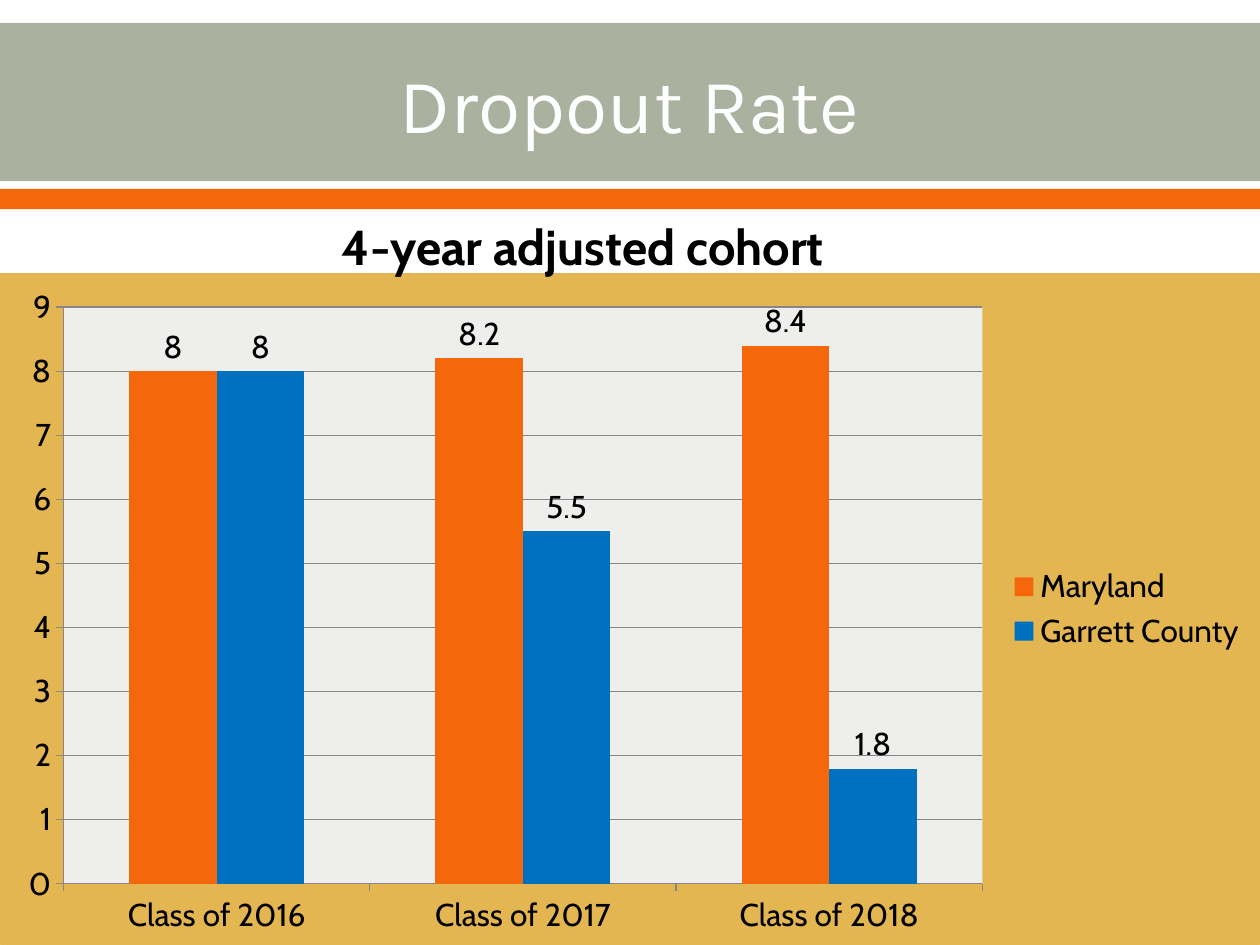
import pptx
import pptx.chart.data
import pptx.dml.color
import pptx.enum.chart
import pptx.enum.shapes
import pptx.enum.text
import pptx.oxml
import pptx.util

Pt = pptx.util.Pt
ORANGE, BLUE, GOLD, SAGE = "F4680B", "0070C0", "E3B651", "ABB19F"
WHITE, BLACK, PALE, GRAY = "FFFFFF", "000000", "EEEFEC", "868686"
CLASSES = ["Class of 2016", "Class of 2017", "Class of 2018"]
RATES = [("Maryland", [8, 8.2, 8.4], ORANGE),
         ("Garrett County", [8, 5.5, 1.8], BLUE)]


def color(hex_string):
    return pptx.dml.color.RGBColor.from_string(hex_string)


def paint(fill, hex_string):
    fill.solid()
    fill.fore_color.rgb = color(hex_string)


def style_font(font, name, size, hex_string, bold=False):
    font.name, font.size, font.bold = name, Pt(size), bold
    font.color.rgb = color(hex_string)


def write_centered(shape, text, name, size, hex_string, bold=False):
    frame = shape.text_frame
    frame.word_wrap = True
    frame.text = text
    para = frame.paragraphs[0]
    para.alignment = pptx.enum.text.PP_ALIGN.CENTER
    style_font(para.runs[0].font, name, size, hex_string, bold)


def place(shape, left, top, width, height):
    shape.left, shape.top = Pt(left), Pt(top)
    shape.width, shape.height = Pt(width), Pt(height)


def add_band(page, left, top, width, height, hex_string):
    band = page.shapes.add_shape(pptx.enum.shapes.MSO_SHAPE.RECTANGLE,
                                 Pt(left), Pt(top), Pt(width), Pt(height))
    band.shadow.inherit = False
    paint(band.fill, hex_string)
    band.line.fill.background()


def add_header(page, left, top, width, height):
    stripe = 11.5
    add_band(page, left, top, width, height - stripe - 4.5, SAGE)
    add_band(page, left, top + height - stripe, width, stripe, ORANGE)

    # Title, raised above the bands
    title = page.shapes.title
    page.shapes._spTree.append(title._element)
    place(title, left + 36, top + 1.5, width - 72, 88)
    write_centered(title, "Dropout Rate", "Karla", 44, WHITE)
    title.text_frame.vertical_anchor = pptx.enum.text.MSO_ANCHOR.MIDDLE


def style_areas(chart):
    """Chart and plot backgrounds, and the fixed place of the plot."""
    def area_format(hex_string, line_xml):
        return pptx.oxml.parse_xml(
            '<c:spPr xmlns:c="http://schemas.openxmlformats.org/drawingml/2006/chart"'
            ' xmlns:a="http://schemas.openxmlformats.org/drawingml/2006/main">'
            f'<a:solidFill><a:srgbClr val="{hex_string}"/></a:solidFill>'
            f'{line_xml}</c:spPr>')

    border = (f'<a:ln w="9525"><a:solidFill><a:srgbClr val="{GOLD}"/>'
              '</a:solidFill></a:ln>')
    space = chart._chartSpace
    space.chart.addnext(area_format(GOLD, border))
    plot_area = space.chart.plotArea
    plot_area.append(area_format(PALE, "<a:ln><a:noFill/></a:ln>"))

    for old in plot_area.findall(pptx.oxml.ns.qn("c:layout")):
        plot_area.remove(old)
    parts = "".join(f'<c:{key} val="{value}"/>' for key, value in [
        ("layoutTarget", "inner"), ("xMode", "edge"), ("yMode", "edge"),
        ("x", 0.05), ("y", 0.05), ("w", 0.73), ("h", 0.86)])
    plot_area.insert(0, pptx.oxml.parse_xml(
        '<c:layout xmlns:c="http://schemas.openxmlformats.org/drawingml/2006/chart">'
        f'<c:manualLayout>{parts}</c:manualLayout></c:layout>'))


def add_rate_chart(page, left, top, width, height):
    data = pptx.chart.data.CategoryChartData()
    data.categories = CLASSES
    for name, values, _ in RATES:
        data.add_series(name, values)
    chart = page.shapes.add_chart(
        pptx.enum.chart.XL_CHART_TYPE.COLUMN_CLUSTERED,
        Pt(left), Pt(top), Pt(width), Pt(height), data).chart
    chart.has_title = False
    style_font(chart.font, "Cabin", 18, BLACK)
    style_areas(chart)

    # Columns and their values
    plot = chart.plots[0]
    plot.gap_width, plot.overlap, plot.vary_by_categories = 150, 0, False
    for series, (_, _, hex_string) in zip(plot.series, RATES):
        paint(series.format.fill, hex_string)
        labels = series.data_labels
        labels.show_value = True
        labels.position = pptx.enum.chart.XL_LABEL_POSITION.OUTSIDE_END

    # Axes
    value_axis = chart.value_axis
    value_axis.minimum_scale, value_axis.maximum_scale = 0, 9
    value_axis.major_unit = 1
    value_axis.has_major_gridlines = True
    for axis in (chart.category_axis, value_axis):
        axis.major_tick_mark = pptx.enum.chart.XL_TICK_MARK.OUTSIDE
        axis.format.line.color.rgb = color(GRAY)
    value_axis.major_gridlines.format.line.color.rgb = color(GRAY)

    # Legend
    chart.has_legend = True
    chart.legend.position = pptx.enum.chart.XL_LEGEND_POSITION.RIGHT
    chart.legend.include_in_layout = False


def add_chart_heading(page, left, top, width, height):
    box = page.shapes.add_textbox(Pt(left), Pt(top), Pt(width), Pt(height))
    write_centered(box, "4-year adjusted cohort", "Cabin", 28, BLACK, bold=True)


def main():
    deck = pptx.Presentation()
    deck.slide_width, deck.slide_height = Pt(720), Pt(540)
    page = deck.slides.add_slide(deck.slide_layouts.get_by_name("Title Only"))
    add_header(page, 0, 13, 720, 106.5)
    add_rate_chart(page, 0, 156, 720, 384)
    add_chart_heading(page, 30, 120, 606, 41)
    deck.save("out.pptx")


if __name__ == "__main__":
    main()
